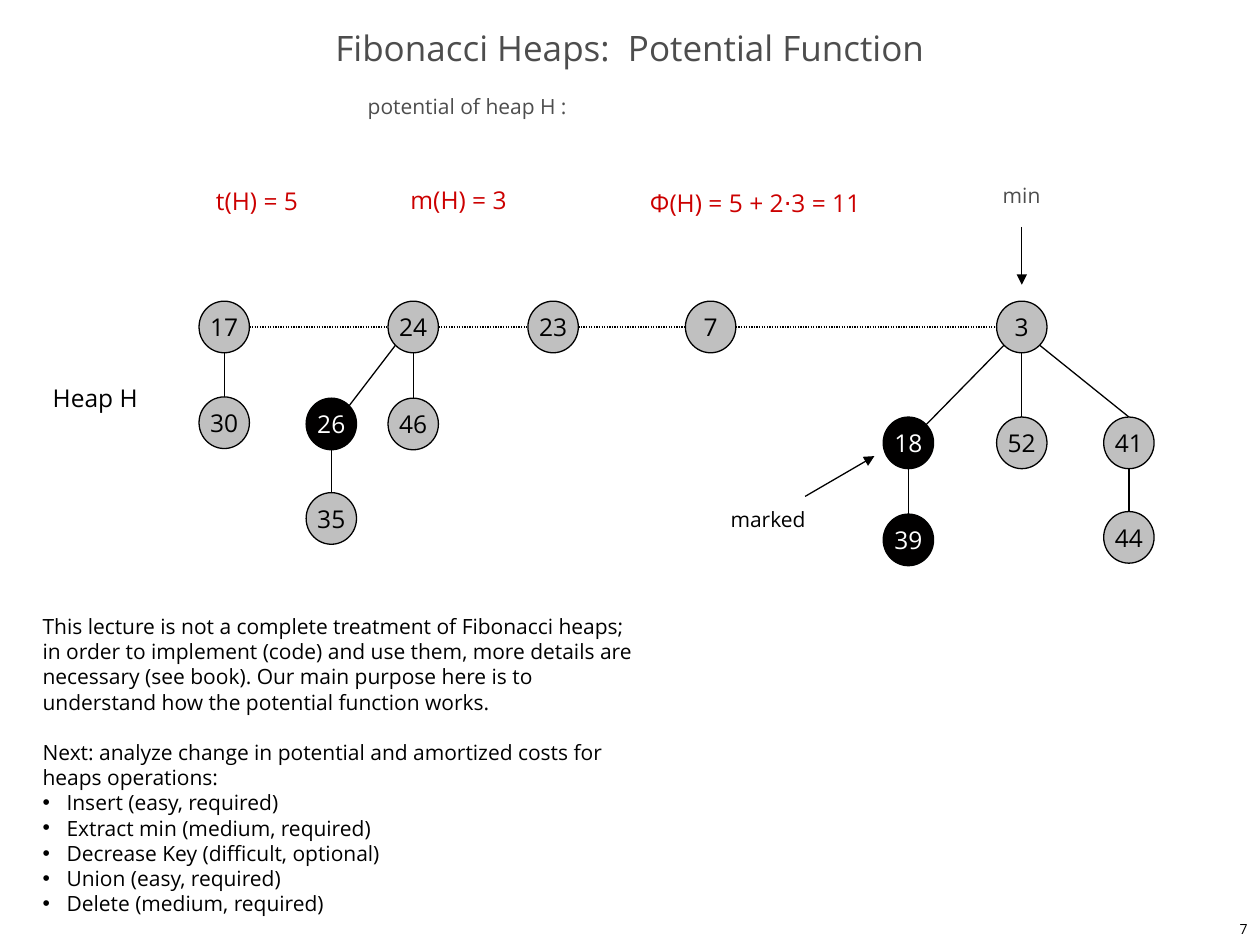
from lxml import etree
from pptx import Presentation
from pptx import util as u
from pptx.dml.color import RGBColor
from pptx.enum import dml, shapes, text
from pptx.oxml.ns import qn

COLORS = {"ink": "000000", "soft": "4D4D4D", "accent": "CC0000",
          "node": "C0C0C0", "marked": "010000", "paper": "FFFFFF"}
FONT = "Open Sans"
NODE_W, NODE_H = 0.4, 0.41
DIAGONAL = 0.707

COLUMNS = {"17": 1.58, "26": 2.43, "24": 3.08, "23": 4.19, "7": 5.44,
           "18": 7.01, "3": 7.91, "41": 8.76}
ROOT_ROW = 2.39
ROOTS = ["17", "24", "23", "7", "3"]
CHILDREN = [
    ("30", "17", "17", 3.15),
    ("26", "24", "26", 3.16),
    ("46", "24", "24", 3.16),
    ("35", "26", "26", 3.91),
    ("18", "3", "18", 3.31),
    ("52", "3", "3", 3.31),
    ("41", "3", "41", 3.31),
    ("39", "18", "18", 4.08),
    ("44", "41", "41", 4.06),
]
MARKED = {"26", "18", "39"}

TOP, BOTTOM, LEFT, RIGHT = (0, -1), (0, 1), (-1, 0), (1, 0)
LOWER_LEFT, LOWER_RIGHT = (-DIAGONAL, DIAGONAL), (DIAGONAL, DIAGONAL)
UPPER_RIGHT = (DIAGONAL, -DIAGONAL)
SLANTED = {"26": (UPPER_RIGHT, LOWER_LEFT), "18": (UPPER_RIGHT, LOWER_LEFT),
           "41": (TOP, LOWER_RIGHT)}

CENTER, END = text.PP_ALIGN.CENTER, text.PP_ALIGN.RIGHT
MIDDLE = text.MSO_ANCHOR.MIDDLE
COUNT = dict(color="accent", align=CENTER, anchor=MIDDLE, wrap=True)
CAPTIONS = [
    ("Fibonacci Heaps:  Potential Function", (0, 0.17, 10, 0.5),
     dict(size=20, color="soft", align=CENTER, anchor=MIDDLE, spacing=0.7, wrap=True)),
    ("potential of heap H :", (2.82, 0.69, 1.88, 0.3), dict(size=12, color="soft")),
    ("t(H) = 5", (1.44, 1.39, 1.2, NODE_H), COUNT),
    ("m(H) = 3", (3.04, 1.38, 1.2, NODE_H), COUNT),
    ("Φ(H) = 5 + 2⋅3 = 11", (5.06, 1.44, 2.02, 0.33), dict(color="accent")),
    ("min", (7.86, 1.4, 0.51, 0.3), dict(size=12, color="soft")),
    ("Heap H", (0.32, 2.99, 0.89, 0.33), {}),
    ("marked", (5.7, 3.97, 0.82, 0.3), dict(size=12)),
    ("7", (7.92, 7.25, 2.08, 0.25), dict(size=8, align=END, anchor=MIDDLE)),
]
POINTERS = [((8.11, 1.8), (8.11, 2.26)), ((6.39, 3.94), (6.94, 3.62))]

NOTES_BOX = (0.24, 4.82, 5, 2.52)
PURPOSE = ("This lecture is not a complete treatment of Fibonacci heaps; in order to "
           "implement (code) and use them, more details are necessary (see book). Our main "
           "purpose here is to understand how the potential function works.")
NEXT = "Next: analyze change in potential and amortized costs for heaps operations:"
OPERATIONS = ["Insert (easy, required)", "Extract min (medium, required)",
              "Decrease Key (difficult, optional)", "Union (easy, required)",
              "Delete (medium, required)"]

deck = Presentation()
deck.slide_width, deck.slide_height = u.Inches(10), u.Inches(7.5)
slide = deck.slides.add_slide(deck.slide_layouts[6])


def rgb(name):
    return RGBColor.from_string(COLORS[name])


def write(frame, content, size=14, color="ink", align=text.PP_ALIGN.LEFT,
          anchor=text.MSO_ANCHOR.TOP, spacing=None, wrap=False, before=None):
    frame.word_wrap = wrap
    frame.vertical_anchor = anchor
    paragraph = frame.paragraphs[0]
    if paragraph.runs:
        paragraph = frame.add_paragraph()
    paragraph.alignment = align
    paragraph.line_spacing = spacing
    if before:
        paragraph.space_before = u.Pt(before)
    run = paragraph.add_run()
    run.text = content
    run.font.name, run.font.size = FONT, u.Pt(size)
    run.font.color.rgb = rgb(color)
    return paragraph


def text_box(box):
    return slide.shapes.add_textbox(*map(u.Inches, box)).text_frame


def connect(start, end, dotted=False, arrow=False):
    link = slide.shapes.add_connector(shapes.MSO_CONNECTOR.STRAIGHT,
                                      *map(u.Inches, (*start, *end)))
    link.line.color.rgb, link.line.width = rgb("ink"), u.Pt(0.75)
    if dotted:
        link.line.dash_style = dml.MSO_LINE.ROUND_DOT
    if arrow:
        etree.SubElement(link.line._get_or_add_ln(), qn("a:tailEnd"), type="triangle")
    etree.SubElement(link._element.spPr, qn("a:effectLst"))


def rim(key, direction):
    left, top = places[key]
    return (left + NODE_W / 2 * (1 + direction[0]),
            top + NODE_H / 2 * (1 + direction[1]))


def draw_node(key):
    node = slide.shapes.add_shape(shapes.MSO_SHAPE.OVAL,
                                  *map(u.Inches, (*places[key], NODE_W, NODE_H)))
    node.shadow.inherit = False
    node.fill.solid()
    node.fill.fore_color.rgb = rgb("marked" if key in MARKED else "node")
    node.line.color.rgb, node.line.width = rgb("ink"), u.Pt(0.75)
    write(node.text_frame, key, color="paper" if key in MARKED else "ink",
          align=CENTER, anchor=MIDDLE)


places = {root: (COLUMNS[root], ROOT_ROW) for root in ROOTS}
places.update({key: (COLUMNS[column], row) for key, _, column, row in CHILDREN})

for root, neighbour in zip(ROOTS, ROOTS[1:]):
    connect(rim(root, RIGHT), rim(neighbour, LEFT), dotted=True)
for child, parent, _, _ in CHILDREN:
    child_side, parent_side = SLANTED.get(child, (TOP, BOTTOM))
    connect(rim(child, child_side), rim(parent, parent_side))
for key in places:
    draw_node(key)
for start, end in POINTERS:
    connect(start, end, arrow=True)
for content, box, style in CAPTIONS:
    write(text_box(box), content, **style)

notes = text_box(NOTES_BOX)
write(notes, PURPOSE, size=12, wrap=True)
write(notes, NEXT, size=12, wrap=True, before=14.4)
for operation in OPERATIONS:
    item = write(notes, operation, size=12, wrap=True)
    properties = item._p.get_or_add_pPr()
    properties.set("marL", str(u.Inches(0.19)))
    properties.set("indent", str(-u.Inches(0.19)))
    etree.SubElement(properties, qn("a:buFont"), typeface="Arial")
    etree.SubElement(properties, qn("a:buChar"), char="•")

deck.save("out.pptx")
